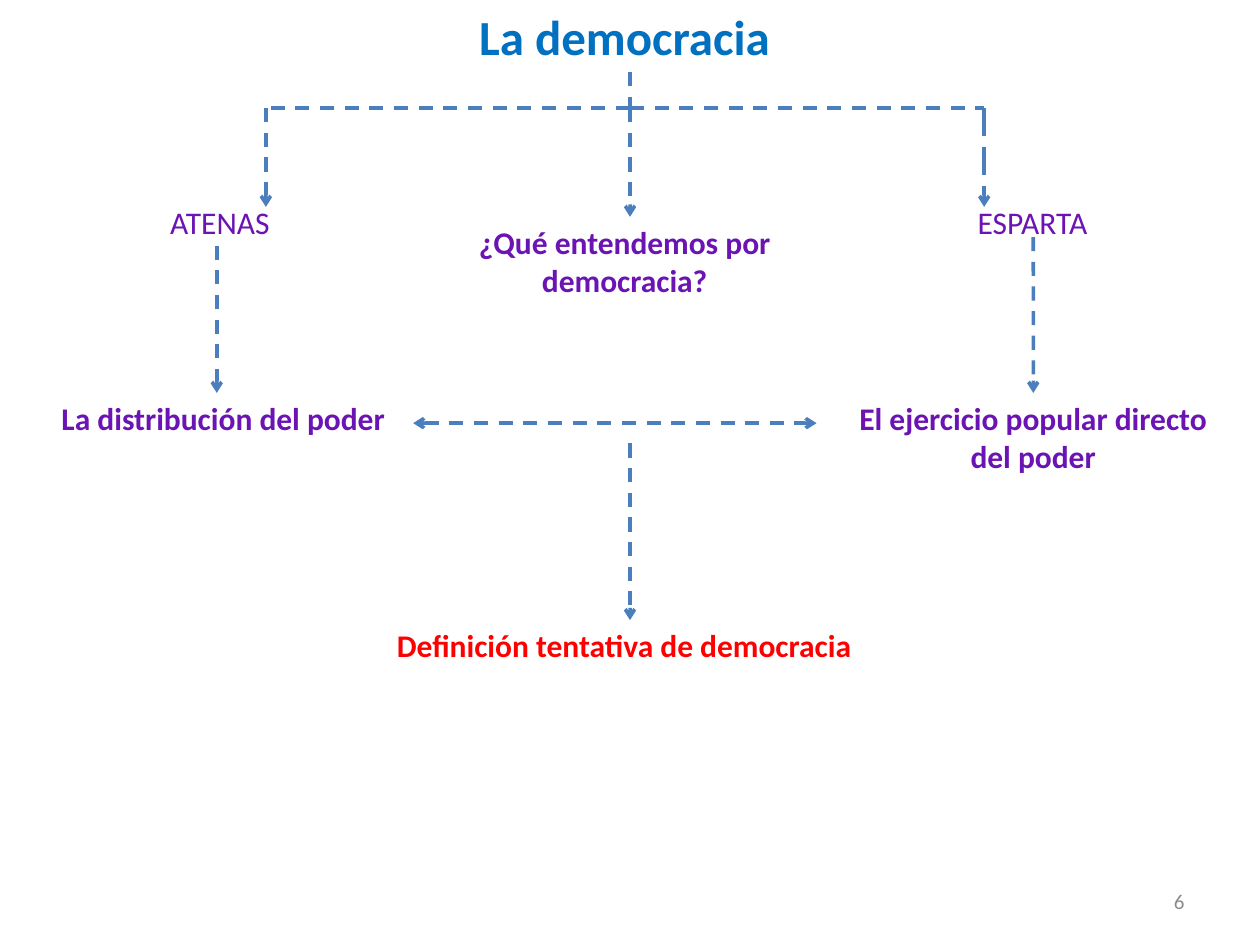
import pptx
import pptx.dml.color
import pptx.enum.dml
import pptx.enum.shapes
import pptx.enum.text
import pptx.oxml
import pptx.oxml.ns
import pptx.util

Cm, Pt = pptx.util.Cm, pptx.util.Pt
ALIGN = pptx.enum.text.PP_ALIGN
ANCHOR = pptx.enum.text.MSO_ANCHOR
DASH = pptx.enum.dml.MSO_LINE.DASH
LONG_DASH = pptx.enum.dml.MSO_LINE.LONG_DASH

THEME = {
    "font": "Calibri",
    "line": ("4B7EBC", 2),
    # style: colour, size, bold
    "title": ("0070C0", 28, True),
    "place": ("6B13B3", 18, False),
    "idea": ("6B13B3", 18, True),
    "result": ("FF0000", 18, True),
    "number": ("8C8C8C", 12, False),
}

# Shared positions, in cm
AXIS, ATHENS, SPARTA = 12.7, 5.36, 19.84
BRANCH, IDEAS = 2.18, 7.92
QUESTION, RESULT = 4.37, 12.5

# name: (text, style, alignment, left, top, width, height)
LABELS = {
    "title": ("La democracia ", "title", ALIGN.CENTER, 0, 0, 25.4, 1.45),
    "sparta": ("ESPARTA", "place", ALIGN.LEFT, 19.46, 3.96, 2.97, 1.02),
    "athens": ("ATENAS", "place", ALIGN.LEFT, 3.18, 3.96, 3.18, 1.02),
    "question": ("¿Qué entendemos por democracia?", "idea", ALIGN.CENTER,
                 9.32, QUESTION, 6.55, 1.8),
    "distribution": ("La distribución del poder", "idea", ALIGN.LEFT,
                     0.99, IDEAS, 7.14, 1.02),
    "exercise": ("El ejercicio popular directo del poder", "idea", ALIGN.CENTER,
                 16.66, IDEAS, 8.34, 1.8),
    "definition": ("Definición tentativa de democracia", "result", ALIGN.LEFT,
                   7.75, RESULT, 9.73, 1.02),
    "number": ("6", "number", ALIGN.RIGHT, 18.21, 17.65, 5.92, 1.02),
}

# (start, end, dash, arrowheads, label joined at start, label joined at end)
LINES = [
    ((AXIS, 1.45), (AXIS, BRANCH), DASH, (), "title", None),
    ((AXIS, BRANCH), (SPARTA, BRANCH), DASH, (), None, None),
    ((AXIS, BRANCH), (ATHENS, BRANCH), DASH, (), None, None),
    ((ATHENS, BRANCH), (ATHENS, 4.17), DASH, ("tail",), None, None),
    ((SPARTA, BRANCH), (SPARTA, 4.17), LONG_DASH, ("tail",), None, None),
    ((AXIS, BRANCH), (AXIS, QUESTION), DASH, ("tail",), None, None),
    ((4.37, 4.95), (4.37, IDEAS), DASH, ("tail",), None, None),
    ((20.83, 4.78), (20.83, IDEAS), DASH, ("tail",), None, "exercise"),
    ((8.33, 8.53), (16.46, 8.53), DASH, ("head", "tail"), None, None),
    ((AXIS, 8.94), (AXIS, RESULT), DASH, ("tail",), None, None),
]


def rgb(value):
    return pptx.dml.color.RGBColor.from_string(value)


def add_label(slide, text, style, align, *box):
    color, size, bold = THEME[style]
    sp = slide.shapes.add_textbox(*map(Cm, box))
    tf = sp.text_frame
    tf.word_wrap = True
    if style == "number":
        tf.vertical_anchor = ANCHOR.MIDDLE
    else:
        tf.auto_size = pptx.enum.text.MSO_AUTO_SIZE.SHAPE_TO_FIT_TEXT
    p = tf.paragraphs[0]
    p.alignment = align
    r = p.add_run()
    r.text = text
    r.font.name = THEME["font"]
    r.font.size = Pt(size)
    r.font.bold = bold
    r.font.color.rgb = rgb(color)
    return sp


def add_line(slide, start, end, dash, heads):
    color, width = THEME["line"]
    sp = slide.shapes.add_connector(
        pptx.enum.shapes.MSO_CONNECTOR.STRAIGHT, *map(Cm, start + end))
    sp.line.color.rgb = rgb(color)
    sp.line.width = Pt(width)
    sp.line.dash_style = dash
    ln = sp.line._get_or_add_ln()
    for head in heads:
        mark = pptx.oxml.parse_xml(
            f'<a:{head}End {pptx.oxml.ns.nsdecls("a")} type="arrow"/>')
        ln.append(mark)
    # An empty effect list removes the shadow
    sp._element.spPr.append(pptx.oxml.parse_xml(
        f'<a:effectLst {pptx.oxml.ns.nsdecls("a")}/>'))
    return sp


def main():
    prs = pptx.Presentation()
    prs.slide_width, prs.slide_height = Cm(25.4), Cm(19.05)
    slide = prs.slides.add_slide(prs.slide_layouts[6])

    # Labels
    labels = {name: add_label(slide, *label) for name, label in LABELS.items()}

    # Lines, leaving a label at its bottom and reaching one at its top
    for start, end, dash, heads, source, target in LINES:
        sp = add_line(slide, start, end, dash, heads)
        if source:
            sp.begin_connect(labels[source], 2)
        if target:
            sp.end_connect(labels[target], 0)

    prs.save("out.pptx")


if __name__ == "__main__":
    main()
